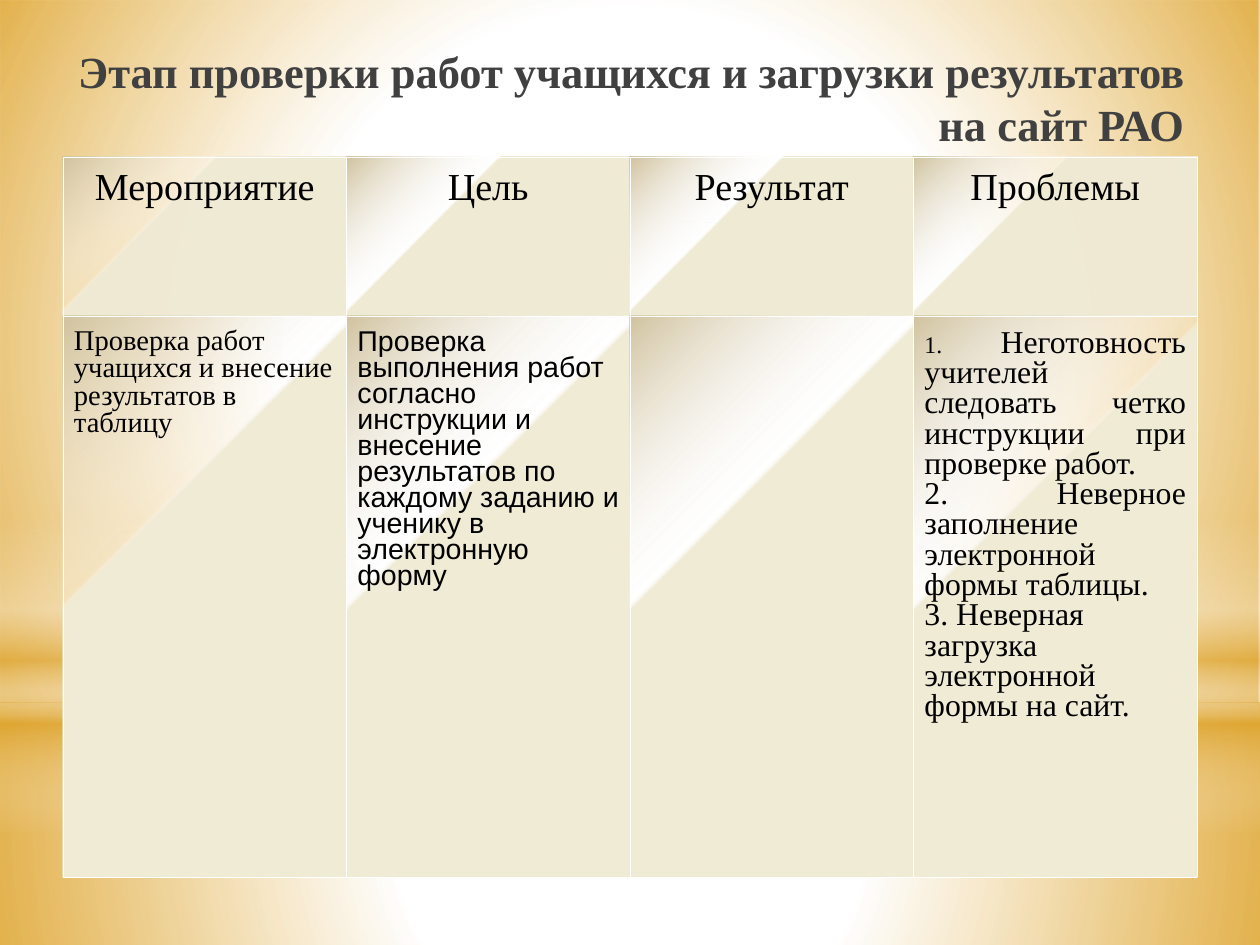
from pptx import Presentation
from pptx.dml.color import RGBColor
from pptx.enum.shapes import MSO_SHAPE
from pptx.enum.text import MSO_ANCHOR, PP_ALIGN
from pptx.oxml import parse_xml
from pptx.oxml.ns import nsdecls, qn
from pptx.util import Pt

PX = 8000
RECT, OVAL = MSO_SHAPE.RECTANGLE, MSO_SHAPE.OVAL
LEFT, CENTER, RIGHT, JUSTIFY = PP_ALIGN.LEFT, PP_ALIGN.CENTER, PP_ALIGN.RIGHT, PP_ALIGN.JUSTIFY
SERIF, SANS = "Times New Roman", "Arial"
MIDDLE = '<a:path path="circle"><a:fillToRect l="50000" t="50000" r="50000" b="50000"/></a:path>'
CORNER = '<a:path path="circle"><a:fillToRect l="100000" t="100000"/></a:path>'
DOWN = '<a:lin ang="5400000" scaled="0"/>'


def set_gradient(props, stops, direction):
    gs = "".join(
        f'<a:gs pos="{pos * 1000}"><a:srgbClr val="{color}">'
        f'<a:alpha val="{alpha * 1000}"/></a:srgbClr></a:gs>'
        for pos, color, alpha in stops)
    grad = parse_xml(f'<a:gradFill rotWithShape="1" {nsdecls("a")}>'
                     f'<a:gsLst>{gs}</a:gsLst>{direction}</a:gradFill>')
    props.replace(props.find(qn("a:noFill")), grad)


def add_run(p, text, size, font, color="000000", bold=False):
    r = p.add_run()
    r.text = text
    r.font.color.rgb = RGBColor.from_string(color)
    for name, value in {"size": Pt(size), "name": font, "bold": bold}.items():
        setattr(r.font, name, value)


prs = Presentation()
prs.slide_width, prs.slide_height = 1260 * PX, 945 * PX
slide = prs.slides.add_slide(prs.slide_layouts[6])

backdrop = [
    (RECT, 703, 242, [(0, "FFFFFF", 91), (37, "FFFFFF", 76), (100, "DC9E1F", 79)], MIDDLE),
    (RECT, 0, 703, [(0, "FFFFFF", 89), (48, "FFFFFF", 62), (100, "DC9E1F", 79)], MIDDLE),
    (RECT, 519, 315, [(0, "FFFFFF", 0), (29, "FFFFFF", 30), (45, "DC9E1F", 40),
                      (55, "FFFFFF", 26), (65, "DC9E1F", 60), (100, "FFFFFF", 0)], DOWN),
    (OVAL, 221, 703, [(0, "FFFFFF", 100), (56, "FFFFFF", 0)], MIDDLE),
]
for kind, top, height, stops, direction in backdrop:
    s = slide.shapes.add_shape(kind, 0, top * PX, 1260 * PX, height * PX)
    s.shadow.inherit = False
    s.line.fill.background()
    s.fill.background()
    set_gradient(s._element.spPr, stops, direction)

title = slide.shapes.add_textbox(63 * PX, 38 * PX, 1134 * PX, 158 * PX)
tf = title.text_frame
frame = {"word_wrap": True, "vertical_anchor": MSO_ANCHOR.TOP, "margin_left": 13 * PX,
         "margin_right": 13 * PX, "margin_top": 6 * PX, "margin_bottom": 6 * PX}
for name, value in frame.items():
    setattr(tf, name, value)
p = tf.paragraphs[0]
p.alignment = RIGHT
add_run(p, "Этап проверки работ учащихся и загрузки результатов на сайт РАО",
        28, SERIF, "404040", True)

headers = ["Мероприятие", "Цель", "Результат", "Проблемы"]
rows = [
    [(15, 0.86, [(CENTER, [(text, 24, SERIF)])]) for text in headers],
    [
        (13, 0.86, [(LEFT, [("Проверка работ учащихся и внесение результатов в таблицу",
                             18, SERIF)])]),
        (15, 0.81, [(LEFT, [("Проверка выполнения работ согласно инструкции и внесение "
                             "результатов по каждому заданию и ученику в электронную форму",
                             18, SANS)])]),
        (13, 0.86, []),
        (13, 0.86, [
            (JUSTIFY, [("1. ", 15, SERIF),
                       ("Неготовность учителей следовать четко инструкции при "
                        "проверке работ.", 20, SERIF)]),
            (JUSTIFY, [("2. Неверное заполнение электронной формы таблицы.", 20, SERIF)]),
            (LEFT, [("3. Неверная загрузка электронной формы на сайт.", 20, SERIF)]),
        ]),
    ],
]
table = slide.shapes.add_table(2, 4, 63 * PX, 157 * PX, 1134 * PX, 720 * PX).table
table.first_row = table.horz_banding = False
for column in table.columns:
    column.width = 1134 * PX // 4
for row, height in zip(table.rows, [159, 561]):
    row.height = height * PX

cell_stops = [(0, "F0EBD5", 100), (65, "F0EBD5", 100), (66, "FFFFFF", 24), (100, "D1C39F", 100)]
for i, row in enumerate(rows):
    for j, (margin_top, spacing, paragraphs) in enumerate(row):
        cell = table.cell(i, j)
        margins = {"margin_left": 11, "margin_right": 11,
                   "margin_top": margin_top, "margin_bottom": 6}
        for name, value in margins.items():
            setattr(cell, name, value * PX)
        cell.fill.background()
        props = cell._tc.get_or_add_tcPr()
        set_gradient(props, cell_stops, CORNER)
        for k, side in enumerate(["lnL", "lnR", "lnT", "lnB"]):
            props.insert(k, parse_xml(
                f'<a:{side} w="762" {nsdecls("a")}><a:solidFill>'
                f'<a:srgbClr val="FFFFFF"/></a:solidFill></a:{side}>'))
        tf = cell.text_frame
        for k, (align, runs) in enumerate(paragraphs):
            p = tf.add_paragraph() if k else tf.paragraphs[0]
            p.alignment = align
            p.line_spacing = spacing
            for text, size, font in runs:
                add_run(p, text, size, font)

prs.save("out.pptx")
